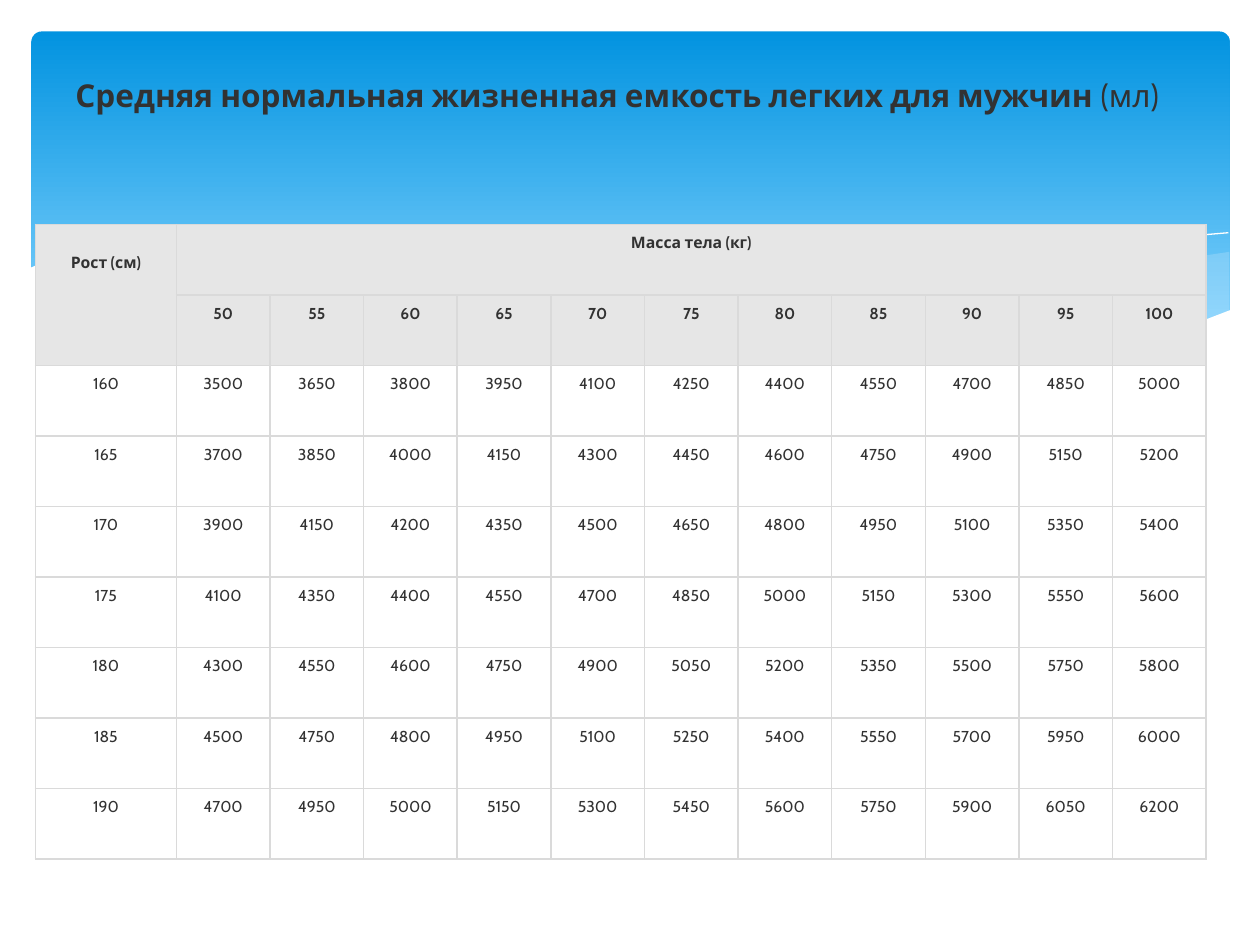
"""Build a slide with a table of normal male lung capacity by height and body mass."""
import pptx
import pptx.dml.color
import pptx.enum.shapes
import pptx.enum.text
import pptx.oxml
import pptx.oxml.ns
import pptx.util

Pt = pptx.util.Pt
FONT = "Cabin"
INK, HEADER, BORDER, WHITE, WAVE = "323232", "E6E6E6", "DADADA", "FFFFFF", "C6E7FC"
TITLE = [("Средняя нормальная жизненная емкость легких для мужчин\u00a0".replace("\u00a0", " "), True),
         ("(мл)", False)]
HEIGHT_LABEL, MASS_LABEL = "Рост (см)", "Масса тела (кг)"
MASSES = list(range(50, 101, 5))
CAPACITIES = {
    160: [3500, 3650, 3800, 3950, 4100, 4250, 4400, 4550, 4700, 4850, 5000],
    165: [3700, 3850, 4000, 4150, 4300, 4450, 4600, 4750, 4900, 5150, 5200],
    170: [3900, 4150, 4200, 4350, 4500, 4650, 4800, 4950, 5100, 5350, 5400],
    175: [4100, 4350, 4400, 4550, 4700, 4850, 5000, 5150, 5300, 5550, 5600],
    180: [4300, 4550, 4600, 4750, 4900, 5050, 5200, 5350, 5500, 5750, 5800],
    185: [4500, 4750, 4800, 4950, 5100, 5250, 5400, 5550, 5700, 5950, 6000],
    190: [4700, 4950, 5000, 5150, 5300, 5450, 5600, 5750, 5900, 6050, 6200],
}
GRADIENT = [(0, "0293E0"), (0.9, "83D3FE")]
RIGHT_WAVE = [
    (702, 144), (682.5, 147), (663, 151), (641.5, 155.5), (620, 160.5), (579.5, 170.5),
    (542, 178.5), (508.5, 185), (476, 191), (507.5, 195), (536.5, 198), (562.5, 199.5),
    (586, 200), (615, 198.5), (640, 196), (663, 191), (683.5, 185), (702.5, 178), (702.5, 144)]
MIDDLE_WAVE = [
    (643, 196.5), (602.5, 191), (558, 183), (508.5, 173), (453, 160), (420.5, 152),
    (389.5, 146), (361.5, 141), (335, 137.5), (302.5, 134.5), (273.5, 133), (247.5, 134),
    (225.5, 135.5), (206, 137.5), (246, 143.5), (291, 152), (323.5, 160), (381.5, 173),
    (432.5, 183.5), (479, 191.5), (520, 197.5), (556.5, 199.5), (589, 200), (617, 199.5)]
FALLING_LINE = [
    (222.5, 140.5), (241, 137.5), (269.5, 135.5), (299.5, 134.5), (337.5, 136), (384, 139.5),
    (419, 144), (458, 150), (500.5, 157.5), (547, 168), (598.5, 180.5), (653, 196)]
RISING_LINE = [
    (441.5, 185), (470, 177), (500.5, 169), (538.5, 160.5), (580.5, 151), (623.5, 143.5),
    (655, 138), (684.5, 134.5), (702, 133)]
WHITE_WAVE = [
    (703.5, 177), (684, 184.5), (662.5, 191), (638.5, 195), (612, 198), (582.5, 199.5),
    (548, 198), (510, 194.5), (466.5, 188.5), (417, 180), (362, 168), (322, 158.5),
    (281.5, 149), (245, 142), (210, 137), (180, 134), (152, 132.5), (127.5, 132.5),
    (105, 133), (85.5, 134.5), (68.5, 137.5), (48, 142), (33, 146), (16.5, 153.5),
    (16.5, 237), (703.5, 237)]
WAVES = [(RIGHT_WAVE, WAVE, 29), (MIDDLE_WAVE, WAVE, 40), (FALLING_LINE, None, 100),
         (RISING_LINE, None, 100), (WHITE_WAVE, WHITE, 100)]
TABLE_LEFT, TABLE_TOP, ROW_HEIGHT = 20.2, 128.2, 40.3
COLUMN_WIDTHS = [80.6] + [53.5] * len(MASSES)
CELL_MARGINS = {"margin_left": Pt(3.6), "margin_right": Pt(3.6),
                "margin_top": Pt(3.6), "margin_bottom": Pt(3.6)}


def color(value):
    return pptx.dml.color.RGBColor.from_string(value)


def apply(target, values):
    for name, value in values.items():
        setattr(target, name, value)


def add_run(paragraph, text, size, bold):
    run = paragraph.add_run()
    run.text = text
    apply(run.font, {"name": FONT, "size": Pt(size), "bold": bold})
    run.font.color.rgb = color(INK)


def add_banner(slide):
    banner = slide.shapes.add_shape(pptx.enum.shapes.MSO_SHAPE.ROUNDED_RECTANGLE,
                                    Pt(18), Pt(18), Pt(684.7), Pt(194.4))
    banner.adjustments[0] = 0.03
    banner.shadow.inherit = False
    banner.line.fill.background()
    banner.fill.gradient()
    banner.fill.gradient_angle = 270
    for stop, (position, value) in zip(banner.fill.gradient_stops, GRADIENT):
        stop.position = position
        stop.color.rgb = color(value)


def add_wave(group, points, fill, opacity):
    scaled = [(x * 100, y * 100) for x, y in points]
    builder = group.shapes.build_freeform(*scaled[0], scale=Pt(1) / 100)
    builder.add_line_segments(scaled[1:], close=fill is not None)
    shape = builder.convert_to_shape()
    shape.shadow.inherit = False
    if fill is None:
        shape.fill.background()
        shape.line.color.rgb = color(WHITE)
        shape.line.width = Pt(0)
        return
    shape.line.fill.background()
    shape.fill.solid()
    shape.fill.fore_color.rgb = color(fill)
    if opacity < 100:
        fill_color = next(shape.element.spPr.iter(pptx.oxml.ns.qn("a:srgbClr")))
        fill_color.append(pptx.oxml.parse_xml(
            f'<a:alpha {pptx.oxml.ns.nsdecls("a")} val="{opacity * 1000}"/>'))


def add_borders(cell):
    properties = cell._tc.get_or_add_tcPr()
    for index, side in enumerate("LRTB"):
        properties.insert(index, pptx.oxml.parse_xml(
            f'<a:ln{side} {pptx.oxml.ns.nsdecls("a")} w="{Pt(1)}"><a:solidFill>'
            f'<a:srgbClr val="{BORDER}"/></a:solidFill></a:ln{side}>'))


def add_capacity_table(slide):
    blanks = [""] * (len(MASSES) - 1)
    rows = [[HEIGHT_LABEL, MASS_LABEL] + blanks, [""] + MASSES]
    rows += [[height] + values for height, values in CAPACITIES.items()]
    table = slide.shapes.add_table(
        len(rows), len(COLUMN_WIDTHS), Pt(TABLE_LEFT), Pt(TABLE_TOP),
        Pt(sum(COLUMN_WIDTHS)), Pt(ROW_HEIGHT * len(rows))).table
    apply(table, {"first_row": False, "horz_banding": False})
    for column, width in zip(table.columns, COLUMN_WIDTHS):
        column.width = Pt(width)
    for row_index, values in enumerate(rows):
        table.rows[row_index].height = Pt(ROW_HEIGHT)
        is_header = row_index < 2
        for column_index, value in enumerate(values):
            cell = table.cell(row_index, column_index)
            apply(cell, CELL_MARGINS)
            if is_header:
                cell.fill.solid()
                cell.fill.fore_color.rgb = color(HEADER)
            else:
                cell.fill.background()
            add_borders(cell)
            if value != "":
                paragraph = cell.text_frame.paragraphs[0]
                apply(paragraph, {"alignment": pptx.enum.text.PP_ALIGN.CENTER,
                                  "line_spacing": 1.15})
                add_run(paragraph, str(value), 9, is_header)
    table.cell(0, 0).merge(table.cell(1, 0))
    table.cell(0, 1).merge(table.cell(0, len(MASSES)))
    apply(table.cell(0, 0), {"margin_top": Pt(15), "margin_bottom": Pt(0)})


def add_title(slide):
    frame = slide.shapes.add_textbox(Pt(36), Pt(39.6), Pt(640), Pt(72.7)).text_frame
    apply(frame, {"word_wrap": False, "vertical_anchor": pptx.enum.text.MSO_ANCHOR.TOP})
    for text, bold in TITLE:
        add_run(frame.paragraphs[0], text, 18, bold)


def main():
    presentation = pptx.Presentation()
    apply(presentation, {"slide_width": Pt(720), "slide_height": Pt(540)})
    slide = presentation.slides.add_slide(presentation.slide_layouts[6])
    add_banner(slide)
    waves = slide.shapes.add_group_shape()
    for points, fill, opacity in WAVES:
        add_wave(waves, points, fill, opacity)
    add_capacity_table(slide)
    add_title(slide)
    presentation.save("out.pptx")


if __name__ == "__main__":
    main()
